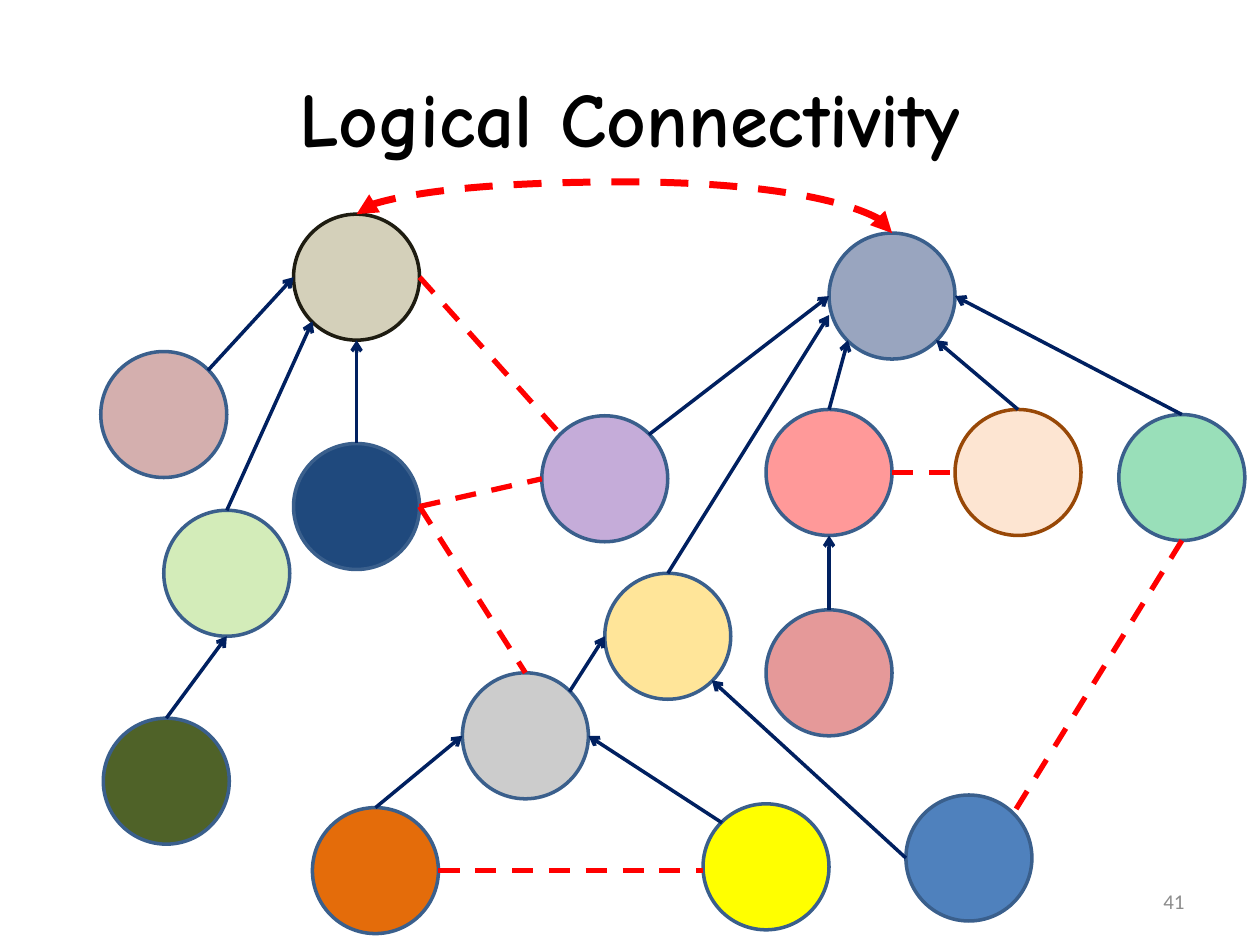
from typing import NamedTuple, Optional

from lxml import etree
from pptx import Presentation
from pptx.dml.color import RGBColor
from pptx.enum.dml import MSO_LINE
from pptx.enum.shapes import MSO_CONNECTOR, MSO_SHAPE
from pptx.enum.text import MSO_ANCHOR, PP_ALIGN
from pptx.oxml.ns import qn
from pptx.util import Inches, Pt

OVAL = MSO_SHAPE.OVAL
STRAIGHT, CURVE = MSO_CONNECTOR.STRAIGHT, MSO_CONNECTOR.CURVE
DASH = MSO_LINE.DASH
MIDDLE = MSO_ANCHOR.MIDDLE
CENTER, RIGHT = PP_ALIGN.CENTER, PP_ALIGN.RIGHT

COLORS = {
    "text": "000000", "number": "8C8C8C", "outline": "3A5F8C",
    "tree": "002060", "link": "FF0000",
}
DIAMETER = 1.0
# Where lines meet a circle, as fractions of its diameter
SITES = {
    "top": (0.5, 0), "bottom": (0.5, 1), "left": (0, 0.5), "right": (1, 0.5),
    "top left": (0.15, 0.15), "top right": (0.85, 0.15),
    "bottom left": (0.15, 0.85), "bottom right": (0.85, 0.85),
    "lower left": (0, 0.65),
}


class Node(NamedTuple):
    x: float
    y: float
    fill: str
    alpha: Optional[int] = 40
    outline: str = COLORS["outline"]


class Edge(NamedTuple):
    start: str
    start_site: str
    end: str
    end_site: str


NODES = {
    "slate": Node(6.58, 1.85, "002060"),
    "khaki": Node(2.33, 1.7, "948A54", outline="1E1C11"),
    "peach": Node(7.58, 3.25, "FAC090", outline="984807"),
    "coral": Node(6.08, 3.25, "FF0000"),
    "purple": Node(4.3, 3.3, "7030A0"),
    "mint": Node(8.88, 3.29, "00B050"),
    "rose": Node(6.08, 4.84, "C00000"),
    "gold": Node(4.8, 4.55, "FFC000"),
    "gray": Node(3.67, 5.34, "808080"),
    "yellow": Node(5.58, 6.38, "FFFF00", None),
    "orange": Node(2.48, 6.41, "E46C0A", None),
    "pink": Node(0.8, 2.79, "953735"),
    "navy": Node(2.33, 3.52, "1F497D", None),
    "blue": Node(7.19, 6.31, "4F81BD", None),
    "lime": Node(1.3, 4.05, "92D050"),
    "olive": Node(0.82, 5.7, "4F6228", None),
}
TREE_EDGES = [
    Edge("purple", "top right", "slate", "left"),
    Edge("coral", "top", "slate", "bottom left"),
    Edge("peach", "top", "slate", "bottom right"),
    Edge("mint", "top", "slate", "right"),
    Edge("rose", "top", "coral", "bottom"),
    Edge("gold", "top", "slate", "lower left"),
    Edge("gray", "top right", "gold", "left"),
    Edge("yellow", "top left", "gray", "right"),
    Edge("pink", "top right", "khaki", "left"),
    Edge("navy", "top", "khaki", "bottom"),
    Edge("blue", "left", "gold", "bottom right"),
    Edge("lime", "top", "khaki", "bottom left"),
    Edge("olive", "top", "lime", "bottom"),
    Edge("orange", "top", "gray", "left"),
]
LINK_EDGES = [
    Edge("navy", "right", "purple", "left"),
    Edge("navy", "right", "gray", "top"),
    Edge("coral", "right", "peach", "left"),
    Edge("khaki", "right", "purple", "top left"),
    Edge("mint", "bottom", "blue", "top right"),
]


def rgb(color):
    return RGBColor.from_string(color)


def write(sp, text, *, size, font, color, align, bold=False):
    tf = sp.text_frame
    tf.word_wrap = True
    tf.vertical_anchor = MIDDLE
    p = tf.paragraphs[0]
    p.alignment = align
    r = p.add_run()
    r.text = text
    r.font.size, r.font.name, r.font.bold = Pt(size), font, bold
    r.font.color.rgb = rgb(color)


def place(sp, x, y, w, h):
    sp.left, sp.top, sp.width, sp.height = map(Inches, (x, y, w, h))


def draw_node(slide, node: Node):
    sp = slide.shapes.add_shape(
        OVAL, Inches(node.x), Inches(node.y), Inches(DIAMETER), Inches(DIAMETER))
    sp.shadow.inherit = False
    sp.fill.solid()
    sp.fill.fore_color.rgb = rgb(node.fill)
    if node.alpha is not None:
        color = sp._element.spPr.find(qn("a:solidFill"))[0]
        etree.SubElement(color, qn("a:alpha"), val=str(node.alpha * 1000))
    sp.line.color.rgb = rgb(node.outline)
    sp.line.width = Pt(2)


def draw_line(slide, start, end, *, color, width, kind=STRAIGHT, dash=None,
              head=None, tail=None):
    line = slide.shapes.add_connector(kind, *map(Inches, (*start, *end)))
    line.line.color.rgb = rgb(color)
    line.line.width = Pt(width)
    if dash is not None:
        line.line.dash_style = dash
    ln = line.line._get_or_add_ln()
    for tag, arrow in (("a:headEnd", head), ("a:tailEnd", tail)):
        if arrow:
            etree.SubElement(ln, qn(tag), type=arrow)
    etree.SubElement(line._element.spPr, qn("a:effectLst"))
    return line


def site_point(name: str, site: str):
    node, (dx, dy) = NODES[name], SITES[site]
    return node.x + dx * DIAMETER, node.y + dy * DIAMETER


def draw_edge(slide, edge: Edge, **style):
    draw_line(slide, site_point(edge.start, edge.start_site),
              site_point(edge.end, edge.end_site), **style)


def draw_root_arc(slide, bulge=2.707):
    """Arch between the two roots: a curved connector turned by 270 degrees."""
    (x1, y1), (x2, y2) = site_point("slate", "top"), site_point("khaki", "top")
    cx, cy = (x1 + x2) / 2, (y1 + y2) / 2
    dx, dy = (y1 - y2) / 2, (x1 - x2) / 2
    arc = draw_line(slide, (cx - dx, cy + dy), (cx + dx, cy - dy), kind=CURVE,
                    color=COLORS["link"], width=4, dash=DASH,
                    head="triangle", tail="triangle")
    sp_pr = arc._element.spPr
    sp_pr.find(qn("a:xfrm")).set("rot", str(270 * 60000))
    guides = sp_pr.find(qn("a:prstGeom")).find(qn("a:avLst"))
    etree.SubElement(guides, qn("a:gd"), name="adj1",
                     fmla=f"val {round(bulge * 100000)}")


def main():
    prs = Presentation()
    prs.slide_width, prs.slide_height = Inches(10), Inches(7.5)
    slide = prs.slides.add_slide(prs.slide_layouts[5])

    title = slide.shapes.title
    place(title, 0.5, 0.3, 9, 1.25)
    write(title, "Logical Connectivity", size=44, font="Comic Neue",
          color=COLORS["text"], align=CENTER, bold=True)
    number = slide.shapes.add_textbox(0, 0, 0, 0)
    place(number, 7.17, 6.95, 2.33, 0.4)
    write(number, "41", size=12, font="Calibri", color=COLORS["number"], align=RIGHT)

    for node in NODES.values():
        draw_node(slide, node)
    draw_root_arc(slide)
    for edge in TREE_EDGES:
        draw_edge(slide, edge, color=COLORS["tree"], width=2, tail="arrow")
    link_style = dict(color=COLORS["link"], width=3, dash=DASH)
    for edge in LINK_EDGES:
        draw_edge(slide, edge, **link_style)
    x, y = site_point("orange", "right")
    draw_line(slide, (x, y), (NODES["yellow"].x, y), **link_style)

    prs.save("out.pptx")


if __name__ == "__main__":
    main()
